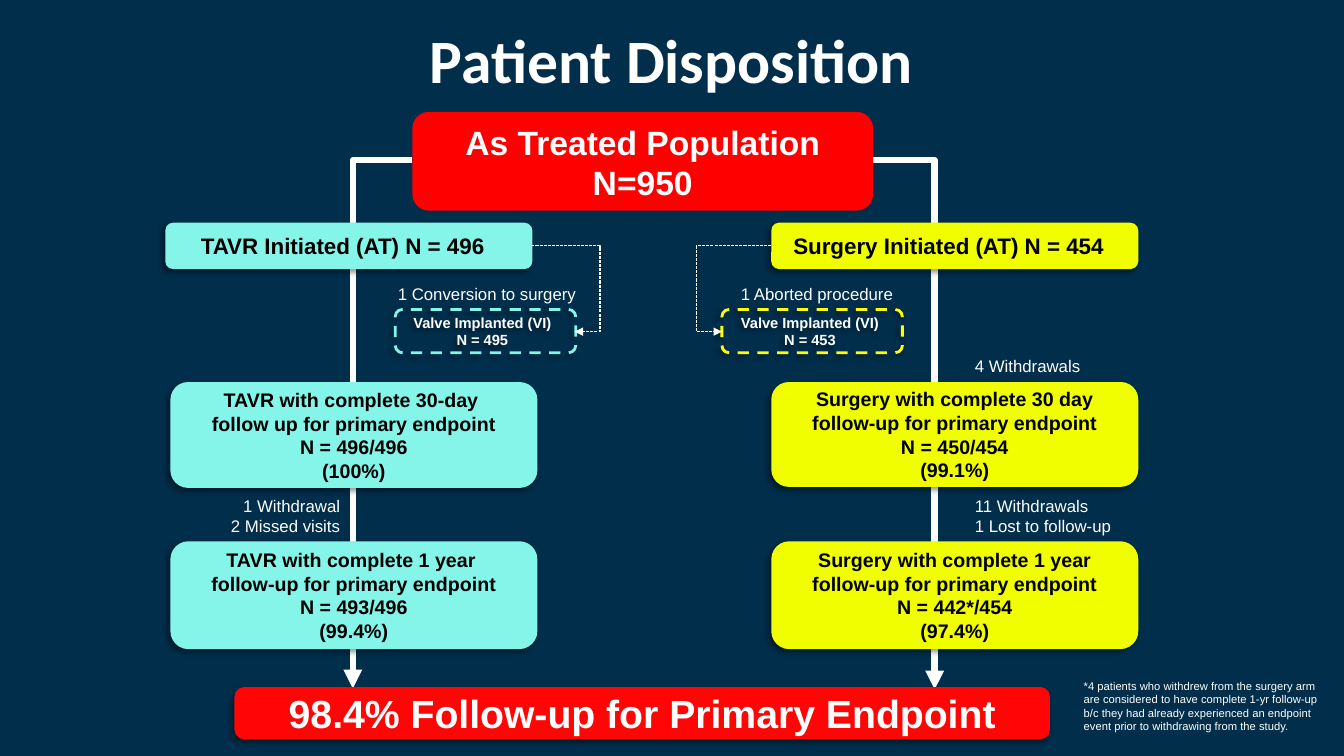
from dataclasses import dataclass
from typing import Optional

from lxml.etree import SubElement
from pptx import Presentation
from pptx.dml.color import RGBColor
from pptx.enum.dml import MSO_LINE
from pptx.enum.shapes import MSO_CONNECTOR, MSO_SHAPE
from pptx.enum.text import MSO_ANCHOR, MSO_AUTO_SIZE, PP_ALIGN
from pptx.oxml.ns import qn
from pptx.util import Inches, Pt

COLORS = {
    "navy": "002E4B",
    "white": "FFFFFF",
    "black": "000000",
    "red": "FF0000",
    "scarlet": "FF0505",
    "aqua": "85F5E9",
    "lime": "F1FE00",
    "yellow": "FFFF00",
}


@dataclass
class Box:
    text: str
    left: float
    top: float
    width: float
    height: float
    size: float
    fill: Optional[str] = None
    edge: Optional[str] = None
    dash: bool = False
    ink: str = "black"
    shade: bool = True
    middle: bool = True
    gap: float = 0.1


@dataclass
class Label:
    text: str
    left: float
    top: float
    width: float
    height: float
    size: float = 12
    align: PP_ALIGN = PP_ALIGN.LEFT
    round: bool = False


@dataclass
class Arrow:
    start: tuple[float, float]
    end: tuple[float, float]
    weight: float
    bend: Optional[float] = None


WIDE = 3.64
TAVR, SURGERY = 1.69, 7.65
START, MONTH, YEAR = 2.21, 3.79, 5.37

TRUNKS = [
    Arrow((8.4, 1.59), (9.27, 6.84), 4.5),
    Arrow((4.09, 1.59), (3.5, 6.83), 4.5),
]
LOOPS = [
    Arrow((5.27, 2.44), (5.7, 3.29), 0.75, 1.585),
    Arrow((7.65, 2.44), (7.16, 3.29), 0.75, 1.515),
]
BOXES = [
    Box("As Treated Population\nN=950", 4.09, 1.11, 4.57, 0.98, 24, "red",
        ink="white", shade=False, middle=False),
    Box("TAVR Initiated (AT) N = 496", 1.64, START, WIDE, 0.46, 16, "aqua", gap=0.22),
    Box("TAVR with complete 30-day \vfollow up for primary endpoint\n"
        "N = 496/496\n(100%)", TAVR, MONTH, WIDE, 1.05, 14, "aqua"),
    Box("TAVR with complete 1 year \vfollow-up for primary endpoint\n"
        "N = 493/496\n(99.4%)", TAVR, YEAR, WIDE, 1.07, 14, "aqua"),
    Box("Surgery Initiated (AT) N = 454", SURGERY, START, WIDE, 0.46, 16, "lime", gap=0.22),
    Box("Surgery with complete 30 day follow-up for primary endpoint\n"
        "N = 450/454\n(99.1%)", SURGERY, MONTH, WIDE, 1.04, 14, "lime"),
    Box("Surgery with complete 1 year follow-up for primary endpoint\n"
        "N = 442*/454\n(97.4%)", SURGERY, YEAR, WIDE, 1.07, 14, "lime"),
    Box("Valve Implanted (VI)\nN = 495", 3.92, 3.07, 1.79, 0.43, 10.5,
        edge="aqua", dash=True, ink="white", gap=0.16),
    Box("Valve Implanted (VI)\nN = 453", 7.16, 3.07, 1.79, 0.43, 10.5,
        edge="yellow", dash=True, ink="white", gap=0.14),
    Box("98.4% Follow-up for Primary Endpoint", 2.34, 6.83, 8.06, 0.49, 28,
        "scarlet", "scarlet", ink="white"),
]
LABELS = [
    Label("1 Conversion to surgery", 3.78, 2.75, 2.05, 0.34, align=PP_ALIGN.RIGHT, round=True),
    Label("1 Withdrawal\n2 Missed visits", 0.52, 4.84, 2.98, 0.56,
          align=PP_ALIGN.RIGHT, round=True),
    Label("1 Aborted procedure", 7.25, 2.77, 1.82, 0.3),
    Label("4 Withdrawals", 9.57, 3.48, 2.98, 0.3),
    Label("11 Withdrawals\n1 Lost to follow-up", 9.57, 4.87, 2.98, 0.5),
    Label("*4 patients who withdrew from the surgery arm are considered to have "
          "complete 1-yr follow-up b/c they had already experienced an endpoint "
          "event prior to withdrawing from the study.", 10.65, 6.69, 2.67, 0.64, 8),
]


def tint(name: str) -> RGBColor:
    return RGBColor.from_string(COLORS[name])


def write(shape, text: str, size: float, ink: str, align: PP_ALIGN,
          bold: bool = False, face: str = "Arial") -> None:
    frame = shape.text_frame
    frame.text = text
    frame.word_wrap = True
    for line in frame.paragraphs:
        line.alignment = align
        for run in line.runs:
            run.font.name = face
            run.font.size = Pt(size)
            run.font.bold = bold
            run.font.color.rgb = tint(ink)


def place(slide, item: Box | Label):
    shape = slide.shapes.add_shape(
        MSO_SHAPE.ROUNDED_RECTANGLE, Inches(item.left), Inches(item.top),
        Inches(item.width), Inches(item.height))
    shape.shadow.inherit = False
    shape.fill.background()
    shape.line.fill.background()
    return shape


def cast(shape) -> None:
    effects = shape._element.spPr.find(qn("a:effectLst"))
    outer = SubElement(effects, qn("a:outerShdw"), blurRad=str(Pt(4)), dist=str(Pt(3)),
                       dir="8100000", algn="tr", rotWithShape="0")
    color = SubElement(outer, qn("a:srgbClr"), val=COLORS["black"])
    SubElement(color, qn("a:alpha"), val="40000")


def draw_box(slide, box: Box) -> None:
    shape = place(slide, box)
    if box.fill:
        shape.fill.solid()
        shape.fill.fore_color.rgb = tint(box.fill)
    if box.edge:
        shape.line.color.rgb = tint(box.edge)
        shape.line.width = Pt(2)
    if box.dash:
        shape.line.dash_style = MSO_LINE.DASH
    if box.shade:
        cast(shape)
    write(shape, box.text, box.size, box.ink, PP_ALIGN.CENTER, True)
    frame = shape.text_frame
    frame.margin_right = Inches(box.gap)
    frame.vertical_anchor = MSO_ANCHOR.MIDDLE if box.middle else MSO_ANCHOR.TOP


def draw_label(slide, label: Label) -> None:
    if label.round:
        shape = place(slide, label)
    else:
        shape = slide.shapes.add_textbox(Inches(label.left), Inches(label.top),
                                         Inches(label.width), Inches(label.height))
    write(shape, label.text, label.size, "white", label.align)
    shape.text_frame.vertical_anchor = MSO_ANCHOR.TOP
    shape.text_frame.auto_size = MSO_AUTO_SIZE.SHAPE_TO_FIT_TEXT


def draw_arrow(slide, arrow: Arrow) -> None:
    ends = [Inches(value) for value in arrow.start + arrow.end]
    link = slide.shapes.add_connector(MSO_CONNECTOR.ELBOW, *ends)
    link.line.color.rgb = tint("white")
    link.line.width = Pt(arrow.weight)
    props = link._element.spPr
    shape = props.find(qn("a:prstGeom"))
    if arrow.bend is None:
        shape.set("prst", "bentConnector2")
    else:
        link.line.dash_style = MSO_LINE.SQUARE_DOT
        SubElement(shape.find(qn("a:avLst")), qn("a:gd"), name="adj1",
                   fmla=f"val {round(arrow.bend * 100000)}")
    SubElement(props.find(qn("a:ln")), qn("a:tailEnd"), type="triangle")
    SubElement(props, qn("a:effectLst"))


def draw_title(slide) -> None:
    title = slide.shapes.add_textbox(Inches(0), Inches(0.17), Inches(13.32), Inches(0.83))
    write(title, "Patient Disposition", 44, "white", PP_ALIGN.CENTER, True, "Calibri")
    frame = title.text_frame
    frame.vertical_anchor = MSO_ANCHOR.MIDDLE
    frame.margin_left = frame.margin_right = Inches(0.05)


def main() -> None:
    deck = Presentation()
    deck.slide_width, deck.slide_height = Inches(13.33), Inches(7.5)
    slide = deck.slides.add_slide(deck.slide_layouts[6])
    slide.background.fill.solid()
    slide.background.fill.fore_color.rgb = tint("navy")
    for trunk in TRUNKS:
        draw_arrow(slide, trunk)
    draw_title(slide)
    for box in BOXES:
        draw_box(slide, box)
    for label in LABELS:
        draw_label(slide, label)
    for loop in LOOPS:
        draw_arrow(slide, loop)
    deck.save("out.pptx")


if __name__ == "__main__":
    main()
